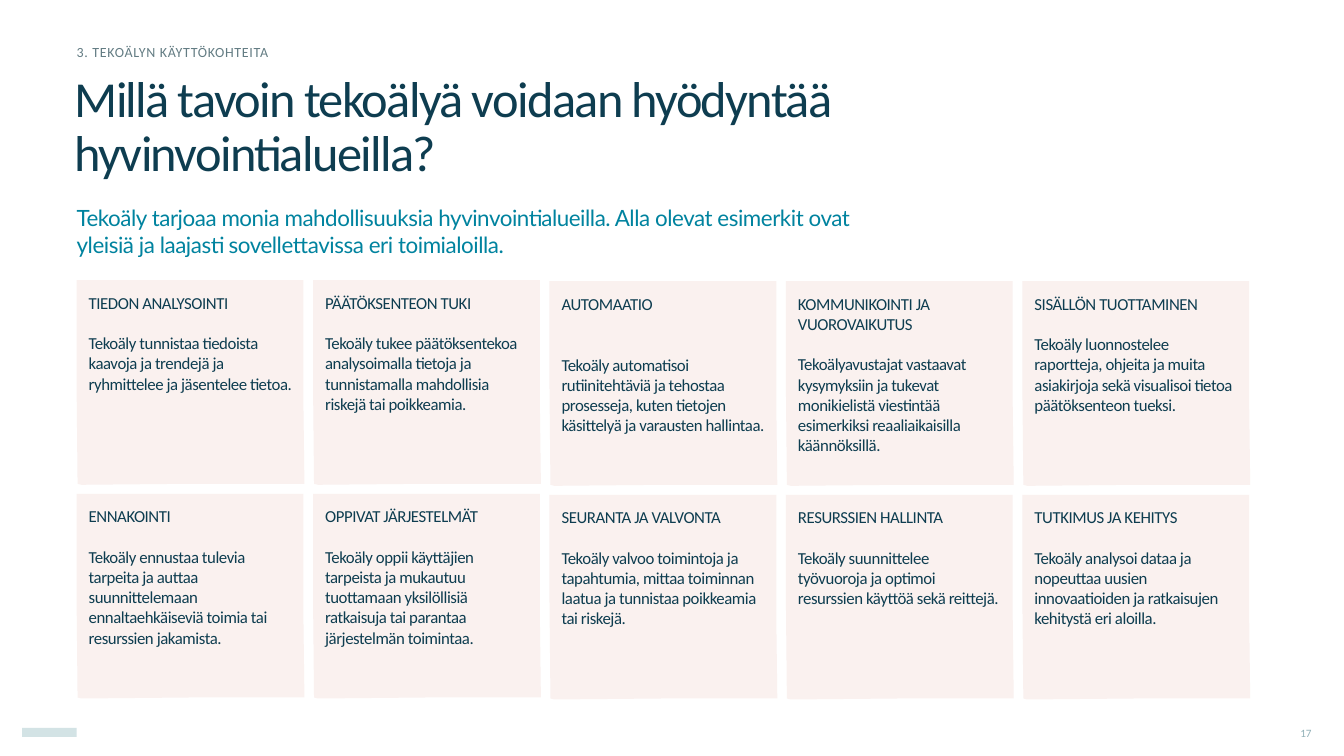
from pptx import Presentation, util as u
from pptx.dml.color import RGBColor
from pptx.enum import shapes, text

INK = "0E3D50"
CARD_FILL = "FAF1EF"
CARD_INSET = 0.12
CARD_OUTLINE = [(0.01, 2.02), (0, 1.03), (0, 0), (1.13, 0), (2.25, 0),
                (2.25, 1.21), (2.26, 2.02), (1.15, 2.02), (0.05, 2.03)]
LEFT, TOP = 0.76, 2.78
COLUMNS = 5
COLUMN_STEP = (10.14 - LEFT) / (COLUMNS - 1)
ROW_STEP = 2.12
BLANK_LINE = 14.65

CARDS = [
    ("TIEDON ANALYSOINTI",
     "Tekoäly tunnistaa tiedoista kaavoja ja trendejä ja ryhmittelee ja jäsentelee tietoa.", 1),
    ("PÄÄTÖKSENTEON TUKI",
     "Tekoäly tukee päätöksentekoa analysoimalla tietoja ja tunnistamalla mahdollisia riskejä tai poikkeamia.", 1),
    ("AUTOMAATIO",
     "Tekoäly automatisoi rutiinitehtäviä ja tehostaa prosesseja, kuten tietojen käsittelyä ja varausten hallintaa.", 2),
    ("KOMMUNIKOINTI JA VUOROVAIKUTUS",
     "Tekoälyavustajat vastaavat kysymyksiin ja tukevat monikielistä viestintää esimerkiksi reaaliaikaisilla käännöksillä.", 1),
    ("SISÄLLÖN TUOTTAMINEN",
     "Tekoäly luonnostelee raportteja, ohjeita ja muita asiakirjoja sekä visualisoi tietoa päätöksenteon tueksi.", 1),
    ("ENNAKOINTI",
     "Tekoäly ennustaa tulevia tarpeita ja auttaa suunnittelemaan ennaltaehkäiseviä toimia tai resurssien jakamista.", 1),
    ("OPPIVAT JÄRJESTELMÄT",
     "Tekoäly oppii käyttäjien tarpeista ja mukautuu tuottamaan yksilöllisiä ratkaisuja tai parantaa järjestelmän toimintaa.", 1),
    ("SEURANTA JA VALVONTA",
     "Tekoäly valvoo toimintoja ja tapahtumia, mittaa toiminnan laatua ja tunnistaa poikkeamia tai riskejä.", 1),
    ("RESURSSIEN HALLINTA",
     "Tekoäly suunnittelee työvuoroja ja optimoi resurssien käyttöä sekä reittejä.", 1),
    ("TUTKIMUS JA KEHITYS",
     "Tekoäly analysoi dataa ja nopeuttaa uusien innovaatioiden ja ratkaisujen kehitystä eri aloilla.", 1),
]


def color(value):
    return RGBColor.from_string(value)


class SlideBuilder:
    def __init__(self, page):
        self.page = page

    def frame(self, box, anchor, inset=0):
        frame = box.text_frame
        frame.word_wrap = True
        frame.auto_size = text.MSO_AUTO_SIZE.NONE
        frame.vertical_anchor = anchor
        frame.margin_left = frame.margin_right = u.Inches(inset)
        frame.margin_top = frame.margin_bottom = u.Inches(inset)
        return frame

    def add_words(self, para, words, size, ink, spacing=0, font="Calibri",
                  align=text.PP_ALIGN.LEFT, before=0, line=1.0):
        para.alignment = align
        para.space_before = u.Pt(before)
        para.line_spacing = line
        span = para.add_run()
        span.text = words
        span.font.name = font
        span.font.size = u.Pt(size)
        span.font.color.rgb = color(ink)
        span._r.get_or_add_rPr().set("spc", str(round(spacing * 100)))

    def place(self, box, left, top, width, height):
        box.left, box.top = u.Inches(left), u.Inches(top)
        box.width, box.height = u.Inches(width), u.Inches(height)

    def title(self, words, area, **style):
        box = self.page.shapes.title
        self.place(box, *area)
        frame = self.frame(box, text.MSO_ANCHOR.MIDDLE)
        self.add_words(frame.paragraphs[0], words, **style)

    def body(self, index, words, area, anchor, **style):
        box = self.page.placeholders[index]
        self.place(box, *area)
        para = self.frame(box, anchor).paragraphs[0]
        settings = para._p.get_or_add_pPr()
        settings.set("marL", "0")
        settings.set("indent", "0")
        settings.insert_element_before(
            settings.makeelement(
                "{http://schemas.openxmlformats.org/drawingml/2006/main}buNone", {}),
            "a:tabLst", "a:defRPr", "a:extLst")
        self.add_words(para, words, **style)

    def label(self, words, area, **style):
        box = self.page.shapes.add_textbox(*map(u.Inches, area))
        frame = self.frame(box, text.MSO_ANCHOR.MIDDLE)
        self.add_words(frame.paragraphs[0], words, **style)

    def paint(self, shape, fill):
        shape.shadow.inherit = False
        shape.fill.solid()
        shape.fill.fore_color.rgb = color(fill)
        shape.line.fill.background()

    def bar(self, area, fill):
        bar = self.page.shapes.add_shape(shapes.MSO_SHAPE.RECTANGLE, *map(u.Inches, area))
        self.paint(bar, fill)

    def card(self, left, top, heading, words, blank_lines):
        points = [(u.Inches(left + x), u.Inches(top + y)) for x, y in CARD_OUTLINE]
        outline = self.page.shapes.build_freeform(*points[0])
        outline.add_line_segments(points[1:], close=True)
        card = outline.convert_to_shape()
        self.paint(card, CARD_FILL)
        frame = self.frame(card, text.MSO_ANCHOR.TOP, CARD_INSET)
        self.add_words(frame.paragraphs[0], heading, 12, INK, -0.3)
        self.add_words(frame.add_paragraph(), words, 12, INK, -0.3,
                       before=blank_lines * BLANK_LINE)


def main():
    deck = Presentation()
    deck.slide_width, deck.slide_height = u.Inches(13.33), u.Inches(7.5)
    page = deck.slides.add_slide(deck.slide_layouts.get_by_name("Two Content"))
    builder = SlideBuilder(page)

    builder.bar((0.22, 7.22, 0.54, 0.09), "D3E3E5")
    builder.title("Millä tavoin tekoälyä voidaan hyödyntää hyvinvointialueilla?",
                  (0.74, 0.68, 9.84, 1.18), size=36, ink=INK, spacing=-1.2, line=0.9)
    builder.body(1, "3. TEKOÄLYN KÄYTTÖKOHTEITA", (LEFT, 0.37, 7.88, 0.29),
                 text.MSO_ANCHOR.MIDDLE, size=10, ink="637C83", spacing=0.5)
    builder.label("17", (12.57, 7.17, 0.44, 0.2), size=8, ink="92B1B8",
                  align=text.PP_ALIGN.RIGHT)
    builder.body(2, "Tekoäly tarjoaa monia mahdollisuuksia hyvinvointialueilla. "
                 "Alla olevat esimerkit ovat yleisiä ja laajasti sovellettavissa eri toimialoilla.",
                 (LEFT, 2.03, 7.85, 0.63), text.MSO_ANCHOR.TOP,
                 size=16, ink="00839F", spacing=-0.3, font="Lato")

    for index, (heading, words, blank_lines) in enumerate(CARDS):
        row, column = divmod(index, COLUMNS)
        nudge = 0.01 if column > 1 else 0
        builder.card(LEFT + column * COLUMN_STEP, TOP + row * ROW_STEP + nudge,
                     heading, words, blank_lines)

    deck.save("out.pptx")


if __name__ == "__main__":
    main()
